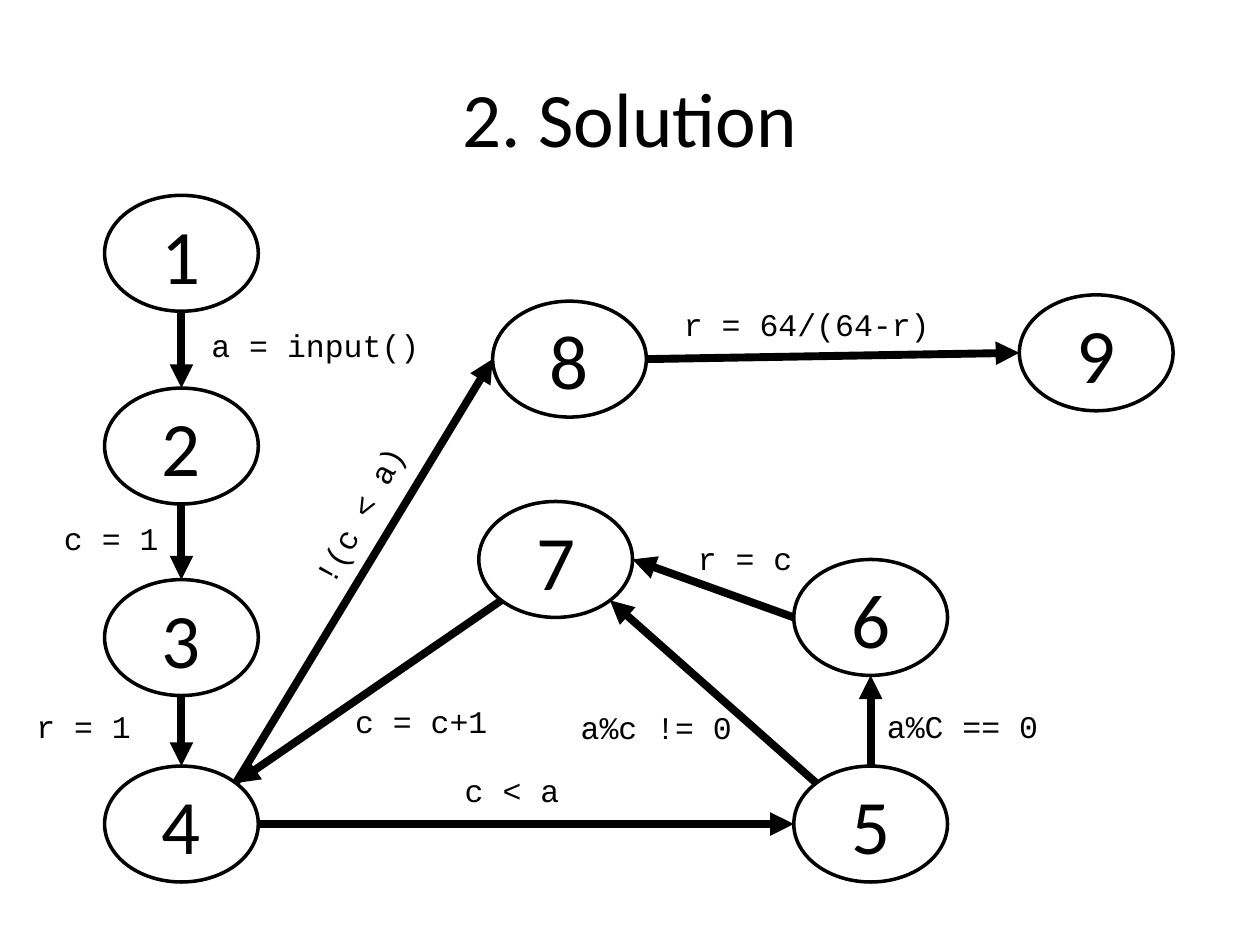
from dataclasses import dataclass
from math import cos, radians, sin

from pptx import Presentation
from pptx.dml.color import RGBColor
from pptx.enum.shapes import MSO_CONNECTOR, MSO_SHAPE
from pptx.enum.text import MSO_ANCHOR, PP_ALIGN
from pptx.oxml.ns import qn
from pptx.util import Inches, Pt
from lxml.etree import SubElement


@dataclass(frozen=True)
class Theme:
    ink: RGBColor = RGBColor(0, 0, 0)
    heading_font: str = "Calibri"
    code_font: str = "Courier New"
    heading_size: int = 44
    code_size: int = 18
    outline: float = 2
    arrow: float = 4.5


THEME = Theme()
NODE_WIDTH, NODE_HEIGHT = 1.22, 0.92
LABEL_HEIGHT = 0.4
ANGLES = {"right": 0, "bottom": 90, "bottom left": 135, "left": 180,
          "top left": 225, "top": 270, "top right": 315}

STATES = {
    "1": (0.83, 1.55), "2": (0.83, 3.08), "3": (0.83, 4.6),
    "4": (0.83, 6.08), "5": (6.3, 6.08), "6": (6.3, 4.44),
    "7": (3.8, 3.98), "8": (3.91, 2.39), "9": (8.09, 2.34),
}
TRANSITIONS = [
    ("1", "bottom", "2", "top", "a = input()", (1.58, 2.54, 2.33), 0),
    ("2", "bottom", "3", "top", "c = 1", (0.41, 4.07, 1.03), 0),
    ("3", "bottom", "4", "top", "r = 1", (0.19, 5.56, 2.33), 0),
    ("4", "right", "5", "left", "c < a", (3.59, 6.07, 1), 0),
    ("5", "top", "6", "bottom", "a%C == 0", (6.94, 5.56, 1.95), 0),
    ("4", "top right", "8", "left", "!(c < a)", (2.14, 3.87, 1.43), 298.8),
    ("5", "top left", "7", "bottom right", "a%c != 0", (4.51, 5.57, 1.51), 0),
    ("6", "left", "7", "right", "r = c", (5.44, 4.23, 1), 0),
    ("8", "right", "9", "left", "r = 64/(64-r)", (5.33, 2.37, 2.77), 0),
    ("7", "bottom left", "4", "top right", "c = c+1", (2.72, 5.52, 1.36), 0),
]
ANGLES["bottom right"] = 45


def write(holder, wording, font, size, align, anchor):
    frame = holder.text_frame
    frame.word_wrap = True
    frame.vertical_anchor = anchor
    paragraph = frame.paragraphs[0]
    paragraph.alignment = align
    run = paragraph.add_run()
    run.text = wording
    run.font.name = font
    run.font.size = Pt(size)
    run.font.color.rgb = THEME.ink


def add_title(slide, wording, box):
    title = slide.shapes.add_textbox(*map(Inches, box))
    write(title, wording, THEME.heading_font, THEME.heading_size,
          PP_ALIGN.CENTER, MSO_ANCHOR.MIDDLE)


def add_state(slide, number, box):
    state = slide.shapes.add_shape(MSO_SHAPE.OVAL, *map(Inches, box))
    state.shadow.inherit = False
    state.fill.background()
    state.line.color.rgb = THEME.ink
    state.line.width = Pt(THEME.outline)
    write(state, number, THEME.heading_font, THEME.heading_size,
          PP_ALIGN.CENTER, MSO_ANCHOR.MIDDLE)


def rim_point(box, side):
    left, top, width, height = box
    angle = radians(ANGLES[side])
    return (Inches(left + width / 2 * (1 + cos(angle))),
            Inches(top + height / 2 * (1 + sin(angle))))


def add_arrow(slide, start, end):
    arrow = slide.shapes.add_connector(MSO_CONNECTOR.STRAIGHT, *start, *end)
    arrow.line.color.rgb = THEME.ink
    arrow.line.width = Pt(THEME.arrow)
    SubElement(arrow.line._get_or_add_ln(), qn("a:tailEnd"), type="triangle")
    SubElement(arrow._element.spPr, qn("a:effectLst"))


def add_label(slide, wording, box, rotation):
    label = slide.shapes.add_textbox(*map(Inches, box))
    label.rotation = rotation
    write(label, wording, THEME.code_font, THEME.code_size,
          PP_ALIGN.LEFT, MSO_ANCHOR.TOP)


def add_flow_graph(slide, box):
    x, y, _, _ = box
    rims = {number: (x + left, y + top, NODE_WIDTH, NODE_HEIGHT)
            for number, (left, top) in STATES.items()}
    for number, rim in rims.items():
        add_state(slide, number, rim)
    for source, exit_side, target, entry_side, wording, spot, rotation in TRANSITIONS:
        add_arrow(slide, rim_point(rims[source], exit_side),
                  rim_point(rims[target], entry_side))
        left, top, width = spot
        add_label(slide, wording, (x + left, y + top, width, LABEL_HEIGHT), rotation)


def main():
    deck = Presentation()
    deck.slide_width, deck.slide_height = Inches(10), Inches(7.5)
    slide = deck.slides.add_slide(deck.slide_layouts[6])
    add_title(slide, "2. Solution", (0.5, 0.3, 9, 1.25))
    add_flow_graph(slide, (0, 0, 10, 7.5))
    deck.save("out.pptx")


if __name__ == "__main__":
    main()
